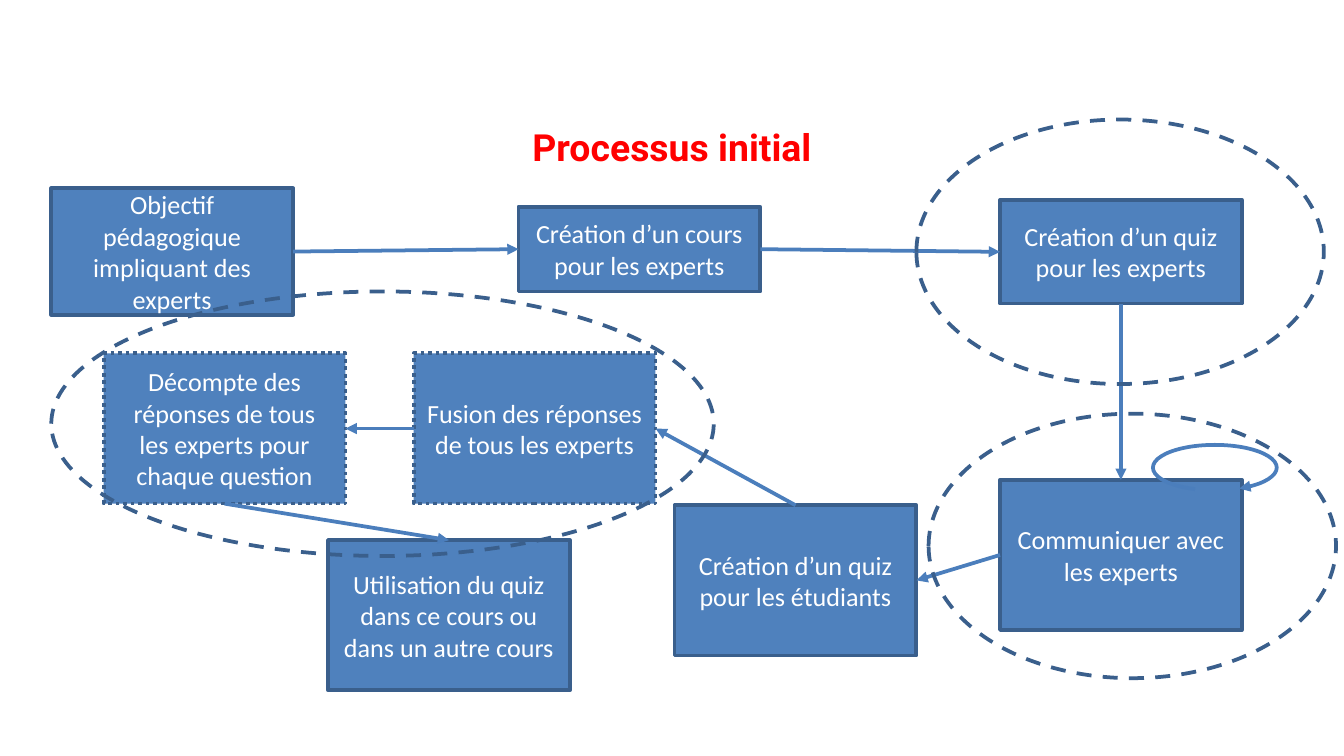
from lxml import etree
from pptx import Presentation
from pptx.dml.color import RGBColor
from pptx.enum.dml import MSO_LINE
from pptx.enum.shapes import MSO_CONNECTOR, MSO_SHAPE
from pptx.enum.text import MSO_ANCHOR, PP_ALIGN
from pptx.oxml.ns import qn
from pptx.util import Cm, Pt

RED = RGBColor(0xFF, 0x00, 0x00)
WHITE = RGBColor(0xFF, 0xFF, 0xFF)
BOX_BLUE = RGBColor(0x4F, 0x81, 0xBD)
OUTLINE_BLUE = RGBColor(0x3A, 0x5F, 0x8C)
ARROW_BLUE = RGBColor(0x4B, 0x7E, 0xBC)

TOP, LEFT, BOTTOM, RIGHT = range(4)
STEP_WIDTH = 4.57
GROUP_HEIGHT = 5


def style_line(shape, color, dash=None):
    shape.line.color.rgb = color
    shape.line.width = Pt(2)
    if dash:
        shape.line.dash_style = dash


def add_arrowhead(shape):
    """Put a triangle at the end of the line of the shape."""
    line = shape.line._get_or_add_ln()
    etree.SubElement(line, qn("a:tailEnd"), type="triangle")


prs = Presentation()
prs.slide_width = Cm(25.4)
prs.slide_height = Cm(14.29)
slide = prs.slides.add_slide(prs.slide_layouts[5])
shapes = slide.shapes

title = shapes.title
title.left, title.top, title.width, title.height = Cm(5.08), Cm(2.16), Cm(15.24), Cm(1.17)
title.text_frame.text = "Processus initial"
title.text_frame.vertical_anchor = MSO_ANCHOR.BOTTOM
heading = title.text_frame.paragraphs[0]
heading.alignment = PP_ALIGN.CENTER
heading_font = heading.runs[0].font
heading_font.name = "Roboto"
heading_font.size = Pt(20)
heading_font.bold = True
heading_font.color.rgb = RED

# Steps: text, left, top, height, dash
DOTTED = MSO_LINE.ROUND_DOT
steps = {
    "goal": ("Objectif pédagogique impliquant des experts", 0.97, 3.56, 2.39, None),
    "course": ("Création d’un cours pour les experts", 9.8, 3.91, 1.6, None),
    "expert quiz": ("Création d’un quiz pour les experts", 18.9, 3.78, 1.96, None),
    "contact": ("Communiquer avec les experts", 18.9, 9.07, 2.84, None),
    "student quiz": ("Création d’un quiz pour les étudiants", 12.75, 9.55, 2.84, None),
    "merge": ("Fusion des réponses de tous les experts", 7.82, 6.68, 2.84, DOTTED),
    "count": ("Décompte des réponses de tous les experts pour chaque question",
              1.96, 6.68, 2.84, DOTTED),
    "use": ("Utilisation du quiz dans ce cours ou dans un autre cours",
            6.2, 10.21, 2.84, None),
}
boxes = {}
for step, (text, left, top, height, dash) in steps.items():
    box = shapes.add_shape(MSO_SHAPE.RECTANGLE, Cm(left), Cm(top), Cm(STEP_WIDTH), Cm(height))
    box.shadow.inherit = False
    box.fill.solid()
    box.fill.fore_color.rgb = BOX_BLUE
    style_line(box, OUTLINE_BLUE, dash)
    box.text_frame.text = text
    box.text_frame.word_wrap = True
    box.text_frame.vertical_anchor = MSO_ANCHOR.MIDDLE
    label = box.text_frame.paragraphs[0]
    label.alignment = PP_ALIGN.CENTER
    label_font = label.runs[0].font
    label_font.name = "Calibri"
    label_font.size = Pt(14)
    label_font.color.rgb = WHITE
    boxes[step] = box

flow = [
    ("goal", RIGHT, "course", LEFT),
    ("course", RIGHT, "expert quiz", LEFT),
    ("expert quiz", BOTTOM, "contact", TOP),
    ("contact", LEFT, "student quiz", RIGHT),
    ("student quiz", TOP, "merge", RIGHT),
    ("merge", LEFT, "count", RIGHT),
    ("count", BOTTOM, "use", TOP),
]
for source, source_side, target, target_side in flow:
    arrow = shapes.add_connector(MSO_CONNECTOR.STRAIGHT, 0, 0, 0, 0)
    arrow.begin_connect(boxes[source], source_side)
    arrow.end_connect(boxes[target], target_side)
    style_line(arrow, ARROW_BLUE)
    add_arrowhead(arrow)
    etree.SubElement(arrow._element.spPr, qn("a:effectLst"))

# Loop on the communication step; angles are in 1/60000 degree, scaled by 100000
loop = shapes.add_shape(MSO_SHAPE.ARC, Cm(21.79), Cm(8.41), Cm(2.34), Cm(0.86))
loop.shadow.inherit = False
loop.adjustments[0] = 79.52
loop.adjustments[1] = 24.33
loop.fill.background()
style_line(loop, ARROW_BLUE)
add_arrowhead(loop)

# Dashed groups: left, top, width
for left, top, width in [(17.32, 2.26, 7.7), (17.55, 7.82, 7.7), (0.97, 5.51, 12.52)]:
    group = shapes.add_shape(MSO_SHAPE.OVAL, Cm(left), Cm(top), Cm(width), Cm(GROUP_HEIGHT))
    group.shadow.inherit = False
    group.fill.background()
    style_line(group, OUTLINE_BLUE, MSO_LINE.DASH)

prs.save("out.pptx")
